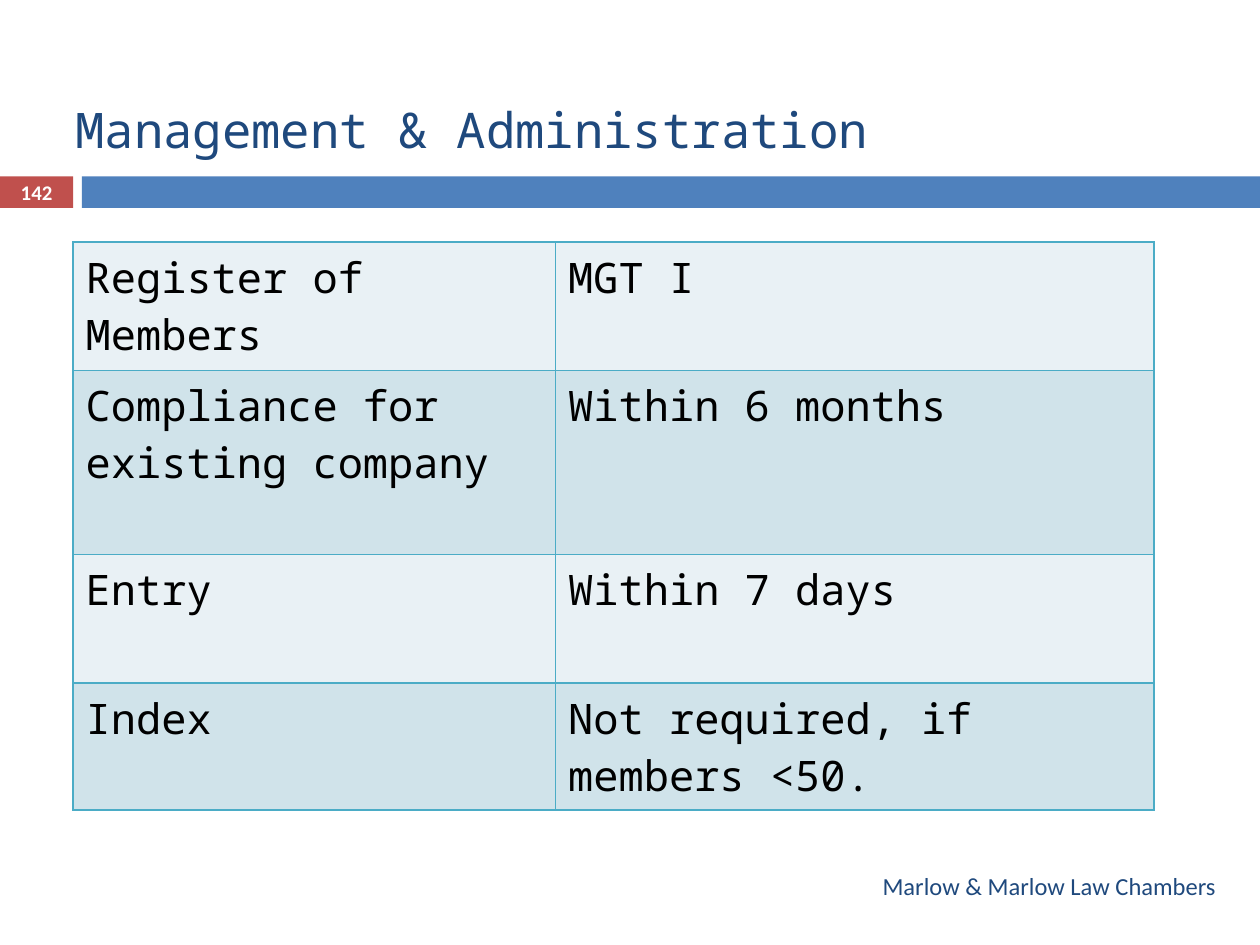
from lxml.etree import SubElement
from pptx import Presentation
from pptx.dml.color import RGBColor
from pptx.enum.shapes import MSO_SHAPE
from pptx.enum.text import MSO_ANCHOR, PP_ALIGN
from pptx.oxml.ns import qn
from pptx.util import Inches, Pt

NAVY = RGBColor(0x1F, 0x49, 0x7D)
BLUE = RGBColor(0x4F, 0x81, 0xBD)
RED = RGBColor(0xC0, 0x50, 0x4D)
TEAL = RGBColor(0x4B, 0xAC, 0xC6)
PALE = RGBColor(0xE9, 0xF1, 0xF5)
MIST = RGBColor(0xD0, 0xE3, 0xEA)
WHITE = RGBColor(0xFF, 0xFF, 0xFF)
BLACK = RGBColor(0, 0, 0)
MONO, SANS = "Noto Sans Mono", "Calibri"

COLS = [3.83, 4.75]
ROWS = [
    (1.02, "Register of Members", "MGT I"),
    (1.46, "Compliance for existing company", "Within 6 months"),
    (1.02, "Entry", "Within 7 days"),
    (1.01, "Index", "Not required, if members <50."),
]


def style(frame, text, size, font, color, bold=False, align=PP_ALIGN.LEFT):
    frame.text = text
    para = frame.paragraphs[0]
    para.alignment = align
    face = para.runs[0].font
    face.size, face.name, face.bold = Pt(size), font, bold
    face.color.rgb = color


def add_bar(slide, left, width, color):
    bar = slide.shapes.add_shape(
        MSO_SHAPE.RECTANGLE, Inches(left), Inches(1.4), Inches(width), Inches(0.25))
    bar.shadow.inherit = False
    bar.fill.solid()
    bar.fill.fore_color.rgb = color
    bar.line.fill.background()


def add_label(slide, box, text, *look, pad=0.1, **more):
    frame = slide.shapes.add_textbox(*map(Inches, box)).text_frame
    frame.word_wrap = True
    frame.vertical_anchor = MSO_ANCHOR.MIDDLE
    frame.margin_left = frame.margin_right = Inches(pad)
    if not pad:
        frame.margin_top = frame.margin_bottom = 0
    style(frame, text, *look, **more)


def fill_cell(cell, text, color):
    style(cell.text_frame, text, 24, MONO, BLACK)
    # Borders come before the fill in the cell properties
    props = cell._tc.get_or_add_tcPr()
    for side in ("a:lnL", "a:lnR", "a:lnT", "a:lnB"):
        line = SubElement(props, qn(side), w=str(Pt(1)))
        paint = SubElement(line, qn("a:solidFill"))
        SubElement(paint, qn("a:srgbClr"), val=str(TEAL))
    cell.fill.solid()
    cell.fill.fore_color.rgb = color


def add_grid(slide):
    high = sum(row[0] for row in ROWS)
    table = slide.shapes.add_table(
        len(ROWS), len(COLS), Inches(0.58), Inches(1.92),
        Inches(sum(COLS)), Inches(high)).table
    table.first_row = False
    for col, width in zip(table.columns, COLS):
        col.width = Inches(width)
    for i, (height, *texts) in enumerate(ROWS):
        table.rows[i].height = Inches(height)
        for j, text in enumerate(texts):
            fill_cell(table.cell(i, j), text, MIST if i % 2 else PALE)


def main():
    deck = Presentation()
    deck.slide_width, deck.slide_height = Inches(10), Inches(7.5)
    slide = deck.slides.add_slide(deck.slide_layouts[6])

    # Bars under the title
    add_bar(slide, 0, 0.58, RED)
    add_bar(slide, 0.65, 9.35, BLUE)

    # Title, page number and footer
    add_label(slide, (0.5, 0.5, 9, 1.05), "Management & Administration", 28, MONO, NAVY)
    add_label(slide, (0, 1.39, 0.58, 0.27), "142", 11.9, SANS, WHITE,
              pad=0, bold=True, align=PP_ALIGN.CENTER)
    add_label(slide, (0.67, 6.83, 9.08, 0.4), "Marlow & Marlow Law Chambers",
              14, SANS, NAVY, align=PP_ALIGN.RIGHT)

    # Register table
    add_grid(slide)
    deck.save("out.pptx")


if __name__ == "__main__":
    main()
